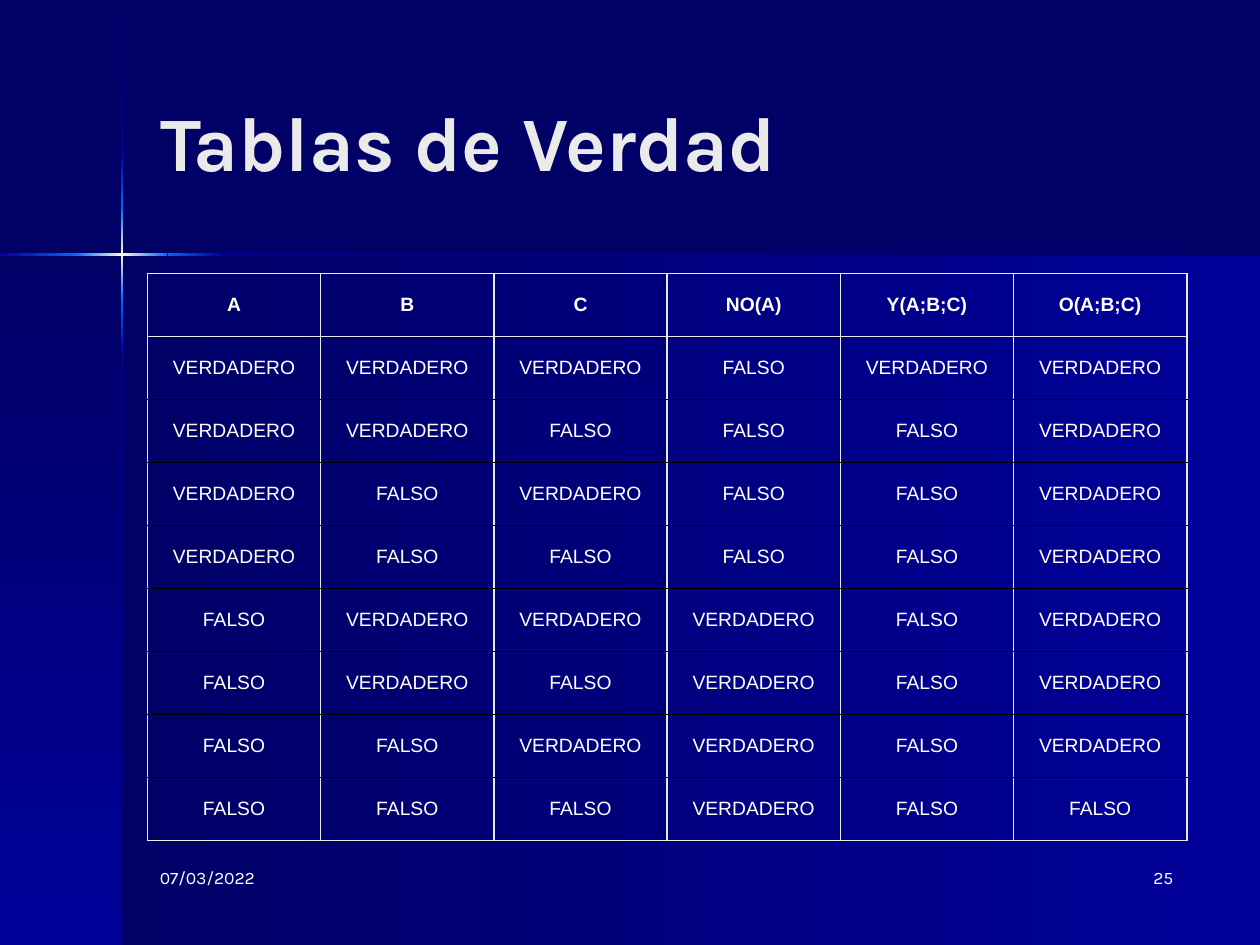
import copy
import itertools

import pptx
import pptx.dml.color
import pptx.enum.shapes
import pptx.enum.text
import pptx.oxml.ns
import pptx.util
from lxml import etree

RGBColor = pptx.dml.color.RGBColor
Inches = pptx.util.Inches
Pt = pptx.util.Pt
qn = pptx.oxml.ns.qn
ALIGN = pptx.enum.text.PP_ALIGN
MIDDLE = pptx.enum.text.MSO_ANCHOR.MIDDLE

NAVY = RGBColor(0x00, 0x00, 0x66)
BLUE = RGBColor(0x00, 0x00, 0x99)
BRIGHT = RGBColor(0x00, 0x66, 0xFF)
CREAM = RGBColor(0xFF, 0xFF, 0xCC)
SILVER = RGBColor(0xEA, 0xEA, 0xEA)
WHITE = RGBColor(0xFF, 0xFF, 0xFF)
BLACK = RGBColor(0x00, 0x00, 0x00)

# Content
TITLE = "Tablas de Verdad"
HEADERS = ["A", "B", "C", "NO(A)", "Y(A;B;C)", "O(A;B;C)"]
WORDS = {True: "VERDADERO", False: "FALSO"}
FOOTERS = [("07/03/2022", 1.17, ALIGN.LEFT), ("25", 7.33, ALIGN.RIGHT)]

# Backdrop: left, top, width, height, gradient colours, runs downwards
PANELS = [
    (0.97, 2.02, 9.03, 5.48, (NAVY, BLUE), False),
    (0, 2.02, 0.97, 5.48, (NAVY, BLUE), True),
]
# Rays of the cross: start, end, gradient colours
VERTICAL_RAYS = [
    (0.01, 1.21, (NAVY, BLUE)),
    (2.82, 7.5, (BLUE, NAVY)),
    (2.38, 2.82, (BRIGHT, BLUE)),
    (1.21, 1.65, (BLUE, BRIGHT)),
    (1.65, 2.38, (BRIGHT, CREAM, BRIGHT)),
]
HORIZONTAL_RAYS = [
    (1.77, 10, (BLUE, NAVY)),
    (0, 0.61, (BLUE, BRIGHT)),
    (1.33, 1.77, (BRIGHT, BLUE)),
    (0.6, 1.33, (BRIGHT, CREAM, BRIGHT)),
]
RAY_X, RAY_Y, RAY_WIDTH = 0.96, 2.01, 0.02

TABLE_BOX = (1.17, 2.17, 8.25, 4.5)


def truth_rows():
    for values in itertools.product([True, False], repeat=3):
        results = (*values, not values[0], all(values), any(values))
        yield [WORDS[result] for result in results]


def add_gradient_bar(page, left, top, width, height, colours, downwards):
    bar = page.shapes.add_shape(
        pptx.enum.shapes.MSO_SHAPE.RECTANGLE,
        Inches(left), Inches(top), Inches(width), Inches(height))
    bar.shadow.inherit = False
    bar.line.fill.background()
    bar.fill.gradient()
    bar.fill.gradient_angle = 270 if downwards else 0
    stop_list = next(bar.element.iter(qn("a:gsLst")))
    while len(stop_list) < len(colours):
        stop_list.append(copy.deepcopy(stop_list[0]))
    for index, (stop, colour) in enumerate(zip(bar.fill.gradient_stops, colours)):
        stop.position = index / (len(colours) - 1)
        stop.color.rgb = colour


def write(frame, text, size, font, colour, align, bold=False):
    para = frame.paragraphs[0]
    para.alignment = align
    span = para.add_run()
    span.text = text
    span.font.size = Pt(size)
    span.font.name = font
    span.font.bold = bold
    span.font.color.rgb = colour


def set_border(cell, side, colour):
    line = etree.SubElement(cell._tc.get_or_add_tcPr(), qn(f"a:ln{side}"), w=str(Pt(1)))
    fill = etree.SubElement(line, qn("a:solidFill"))
    etree.SubElement(fill, qn("a:srgbClr"), val=str(colour))


def add_truth_table(page):
    rows = [HEADERS, *truth_rows()]
    left, top, width, height = TABLE_BOX
    table = page.shapes.add_table(
        len(rows), len(HEADERS),
        Inches(left), Inches(top), Inches(width), Inches(height)).table
    table.first_row = False
    table.horz_banding = False
    # Light rules frame the header and the table; the inner rules are black
    rules = [SILVER if edge in (0, 1, len(rows)) else BLACK
             for edge in range(len(rows) + 1)]
    for row_index, row in enumerate(rows):
        for column_index, text in enumerate(row):
            cell = table.cell(row_index, column_index)
            cell.vertical_anchor = MIDDLE
            set_border(cell, "L", SILVER)
            set_border(cell, "R", SILVER)
            set_border(cell, "T", rules[row_index])
            set_border(cell, "B", rules[row_index + 1])
            cell.fill.background()
            write(cell.text_frame, text, 11, "Arial", WHITE, ALIGN.CENTER,
                  bold=row_index == 0)


def main():
    deck = pptx.Presentation()
    deck.slide_width, deck.slide_height = Inches(10), Inches(7.5)
    page = deck.slides.add_slide(deck.slide_layouts[5])
    page.background.fill.solid()
    page.background.fill.fore_color.rgb = NAVY

    # Backdrop panels and cross of light
    for panel in PANELS:
        add_gradient_bar(page, *panel)
    for start, end, colours in VERTICAL_RAYS:
        add_gradient_bar(page, RAY_X, start, RAY_WIDTH, end - start, colours, True)
    for start, end, colours in HORIZONTAL_RAYS:
        add_gradient_bar(page, start, RAY_Y, end - start, RAY_WIDTH, colours, False)

    # Date and page number
    for text, left, align in FOOTERS:
        box = page.shapes.add_textbox(Inches(left), Inches(6.83), Inches(2.08), Inches(0.5))
        box.text_frame.word_wrap = True
        write(box.text_frame, text, 10, "Karla", WHITE, align)

    # Title
    title = page.shapes.title
    title.left, title.top = Inches(1.17), Inches(0.33)
    title.width, title.height = Inches(8.25), Inches(1.57)
    title.text_frame.vertical_anchor = MIDDLE
    write(title.text_frame, TITLE, 44, "Karla", SILVER, ALIGN.LEFT, bold=True)

    add_truth_table(page)
    deck.save("out.pptx")


if __name__ == "__main__":
    main()
